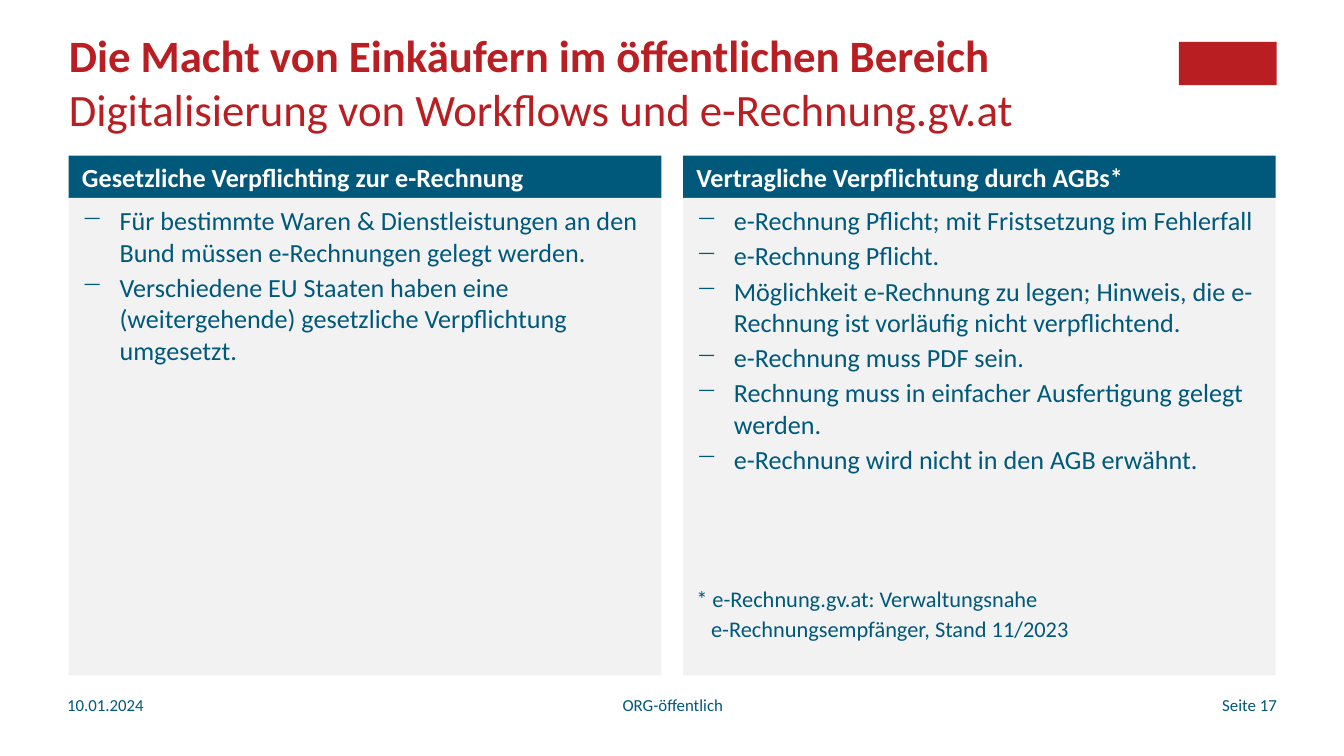
import pptx
import pptx.util
import pptx.dml.color
import pptx.enum.shapes
import pptx.enum.text
import lxml.etree

Cm, Pt = pptx.util.Cm, pptx.util.Pt
Color = pptx.dml.color.RGBColor
Align, Anchor = pptx.enum.text.PP_ALIGN, pptx.enum.text.MSO_ANCHOR
RECT = pptx.enum.shapes.MSO_SHAPE.RECTANGLE
RED = Color(0xB9, 0x1E, 0x23)
BLUE = Color(0x00, 0x58, 0x7A)
GREY = Color(0xF2, 0xF2, 0xF2)
WHITE = Color(0xFF, 0xFF, 0xFF)


def block(left, top, width, height, fill):
    box = slide.shapes.add_shape(RECT, Cm(left), Cm(top), Cm(width), Cm(height))
    box.shadow.inherit = False
    box.fill.solid()
    box.fill.fore_color.rgb = fill
    box.line.fill.background()
    frame = box.text_frame
    frame.word_wrap = True
    frame.vertical_anchor = Anchor.TOP
    return frame


def write(frame, text, size, color, align=Align.LEFT, bullet=False):
    para = frame.paragraphs[0]
    if para.runs:
        para = frame.add_paragraph()
    para.text = text
    para.alignment = align
    if bullet:
        props = para._p.get_or_add_pPr()
        props.set("marL", str(Cm(0.71)))
        props.set("indent", str(-Cm(0.71)))
        mark = lxml.etree.SubElement(props, pptx.oxml.ns.qn("a:buChar"))
        mark.set("char", "−")
    para.font.name = "Calibri"
    para.font.size = Pt(size)
    para.font.color.rgb = color
    return para


deck = pptx.Presentation()
deck.slide_width, deck.slide_height = Cm(25.4), Cm(14.28)
slide = deck.slides.add_slide(deck.slide_layouts[5])

# Title
title = slide.shapes.title
title.left, title.top, title.width, title.height = Cm(1.3), Cm(0.53), Cm(21), Cm(2)
frame = title.text_frame
frame.margin_left = frame.margin_right = frame.margin_top = frame.margin_bottom = 0
frame.vertical_anchor = Anchor.TOP
frame.auto_size = pptx.enum.text.MSO_AUTO_SIZE.NONE
para = write(frame, "Die Macht von Einkäufern im öffentlichen Bereich", 24, RED)
para.runs[0].font.bold = True
para.add_line_break()
para.add_run().text = "Digitalisierung von Workflows und e-Rechnung.gv.at"

# Plain shape in the logo corner
block(22.28, 0.79, 1.85, 0.82, RED)

# Two columns: heading bar and list
columns = [
    ("Gesetzliche Verpflichting zur e-Rechnung", [
        "Für bestimmte Waren & Dienstleistungen an den Bund müssen e-Rechnungen gelegt werden.",
        "Verschiedene EU Staaten haben eine (weitergehende) gesetzliche Verpflichtung umgesetzt.",
    ]),
    ("Vertragliche Verpflichtung durch AGBs*", [
        "e-Rechnung Pflicht; mit Fristsetzung im Fehlerfall",
        "e-Rechnung Pflicht.",
        "Möglichkeit e-Rechnung zu legen; Hinweis, die e-Rechnung ist vorläufig nicht verpflichtend.",
        "e-Rechnung muss PDF sein.",
        "Rechnung muss in einfacher Ausfertigung gelegt werden.",
        "e-Rechnung wird nicht in den AGB erwähnt.",
    ]),
]
for col, (head, points) in enumerate(columns):
    left = 1.3 + col * 11.61
    bar = block(left, 2.94, 11.2, 0.8, BLUE)
    bar.vertical_anchor = Anchor.MIDDLE
    write(bar, head, 14, WHITE).font.bold = True
    body = block(left, 3.74, 11.2, 9.02, GREY)
    for point in points:
        write(body, point, 14, BLUE, bullet=True).space_after = Pt(2)

# Footnote below the right list
note = write(body, "* e-Rechnung.gv.at: Verwaltungsnahe", 12, BLUE)
note.space_before, note.space_after = Pt(57), Pt(2)
note = write(body, "e-Rechnungsempfänger, Stand 11/2023", 12, BLUE)
note._p.get_or_add_pPr().set("marL", str(Cm(0.28)))

# Footer
footer = [
    (1.27, 5.92, "10.01.2024", Align.LEFT),
    (8.69, 8.05, "ORG-öffentlich", Align.CENTER),
    (18.21, 5.92, "Seite 17", Align.RIGHT),
]
for left, width, text, align in footer:
    box = slide.shapes.add_textbox(Cm(left), Cm(13), Cm(width), Cm(1))
    frame = box.text_frame
    frame.word_wrap = True
    frame.margin_left = frame.margin_right = 0
    write(frame, text, 9, BLUE, align)

deck.save("out.pptx")
